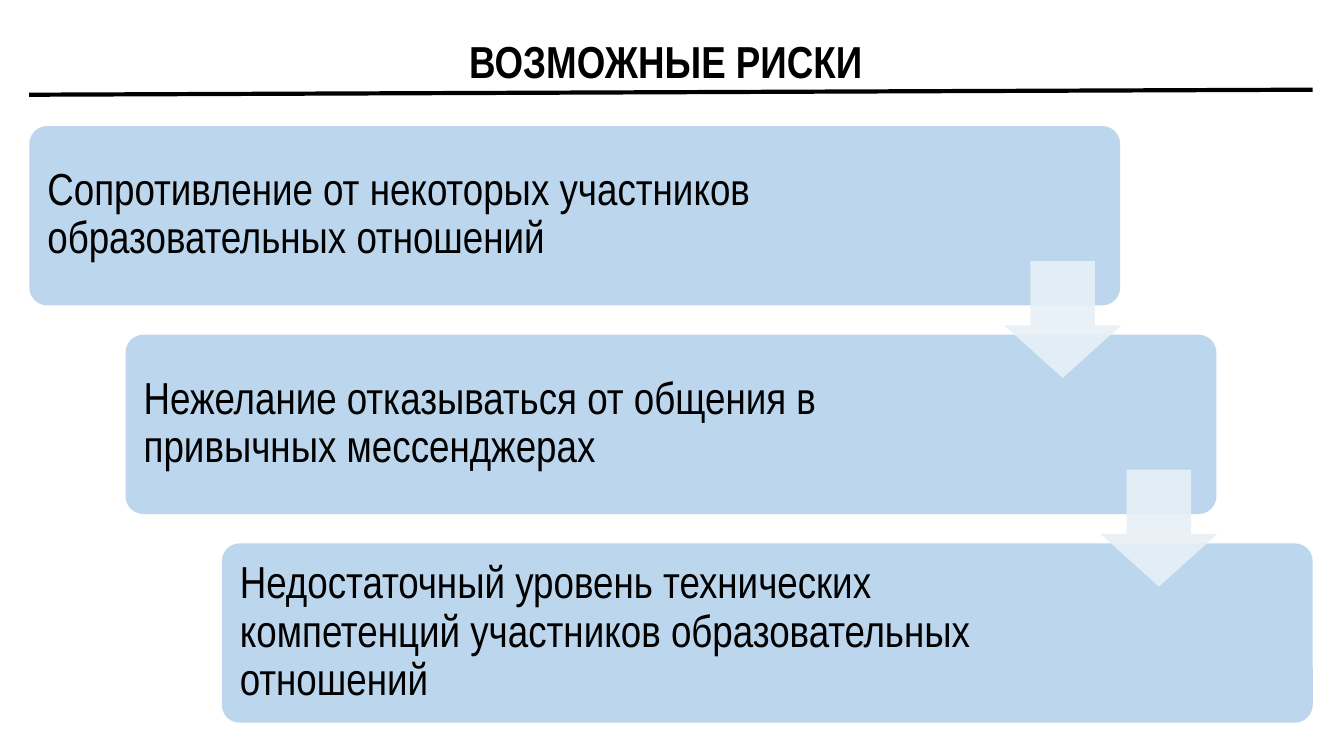
from lxml.etree import SubElement
from pptx import Presentation
from pptx.dml.color import RGBColor
from pptx.enum.shapes import MSO_CONNECTOR as Connector, MSO_SHAPE as Shape
from pptx.enum.text import MSO_ANCHOR as Anchor, PP_ALIGN as Align
from pptx.oxml.ns import qn
from pptx.util import Inches, Pt


def color(value):
    return RGBColor.from_string(value)


class SlideBuilder:
    font_name = "Arial Narrow"
    font_size = 32
    ink = "000000"
    card_fill = "BCD7ED"
    arrow_fill = "E7F0F7"

    def __init__(self, presentation):
        self.slide = presentation.slides.add_slide(presentation.slide_layouts[6])

    def text(self, content, left, top, width, height, insets, align=Align.LEFT, bold=False):
        box = self.slide.shapes.add_textbox(
            Inches(left), Inches(top), Inches(width), Inches(height))
        frame = box.text_frame
        frame.word_wrap = True
        frame.vertical_anchor = Anchor.MIDDLE
        frame.margin_left = frame.margin_right = Inches(insets[0])
        frame.margin_top = frame.margin_bottom = Inches(insets[1])
        paragraph = frame.paragraphs[0]
        paragraph.alignment = align
        paragraph.line_spacing = 0.9
        run = paragraph.add_run()
        run.text = content
        run.font.name = self.font_name
        run.font.size = Pt(self.font_size)
        run.font.bold = bold
        run.font.color.rgb = color(self.ink)

    def line(self, start, end, width):
        points = [Inches(value) for value in (*start, *end)]
        connector = self.slide.shapes.add_connector(Connector.STRAIGHT, *points)
        connector.line.color.rgb = color(self.ink)
        connector.line.width = Pt(width)
        SubElement(connector._element.spPr, qn("a:effectLst"))

    def shape(self, kind, left, top, width, height, fill, adjustments, opacity=100):
        shape = self.slide.shapes.add_shape(
            kind, Inches(left), Inches(top), Inches(width), Inches(height))
        shape.shadow.inherit = False
        for index, value in enumerate(adjustments):
            shape.adjustments[index] = value
        shape.fill.solid()
        shape.fill.fore_color.rgb = color(fill)
        shape.line.fill.background()
        if opacity < 100:
            tint = shape._element.spPr.find(qn("a:solidFill")).find(qn("a:srgbClr"))
            SubElement(tint, qn("a:alpha"), val=str(opacity * 1000))

    def card(self, content, left, top, text_width):
        self.shape(Shape.ROUNDED_RECTANGLE, left, top, 10.82, 1.78, self.card_fill, [0.1])
        self.text(content, left + 0.05, top + 0.05, text_width, 1.67, (0.13, 0.13))

    def arrow(self, left, top):
        self.shape(Shape.DOWN_ARROW, left, top, 1.16, 1.16,
                   self.arrow_fill, [0.55, 0.45], opacity=90)


def main():
    presentation = Presentation()
    presentation.slide_width = Inches(13.33)
    presentation.slide_height = Inches(7.5)
    builder = SlideBuilder(presentation)

    builder.text("ВОЗМОЖНЫЕ РИСКИ", 0, 0.2, 13.21, 0.87, (0.1, 0.05),
                 align=Align.CENTER, bold=True)
    builder.line((0.29, 0.94), (13.02, 0.89), 3)

    risks = [
        ("Сопротивление от некоторых участников образовательных отношений", 8.9),
        ("Нежелание отказываться от общения в привычных мессенджерах", 8.61),
        ("Недостаточный уровень технических компетенций участников "
         "образовательных отношений", 8.61),
    ]
    step_x, step_y = 0.955, 2.07
    for index, (risk, text_width) in enumerate(risks):
        builder.card(risk, 0.29 + index * step_x, 1.25 + index * step_y, text_width)
    for index in range(len(risks) - 1):
        builder.arrow(9.96 + index * step_x, 2.59 + index * step_y)

    presentation.save("out.pptx")


if __name__ == "__main__":
    main()
